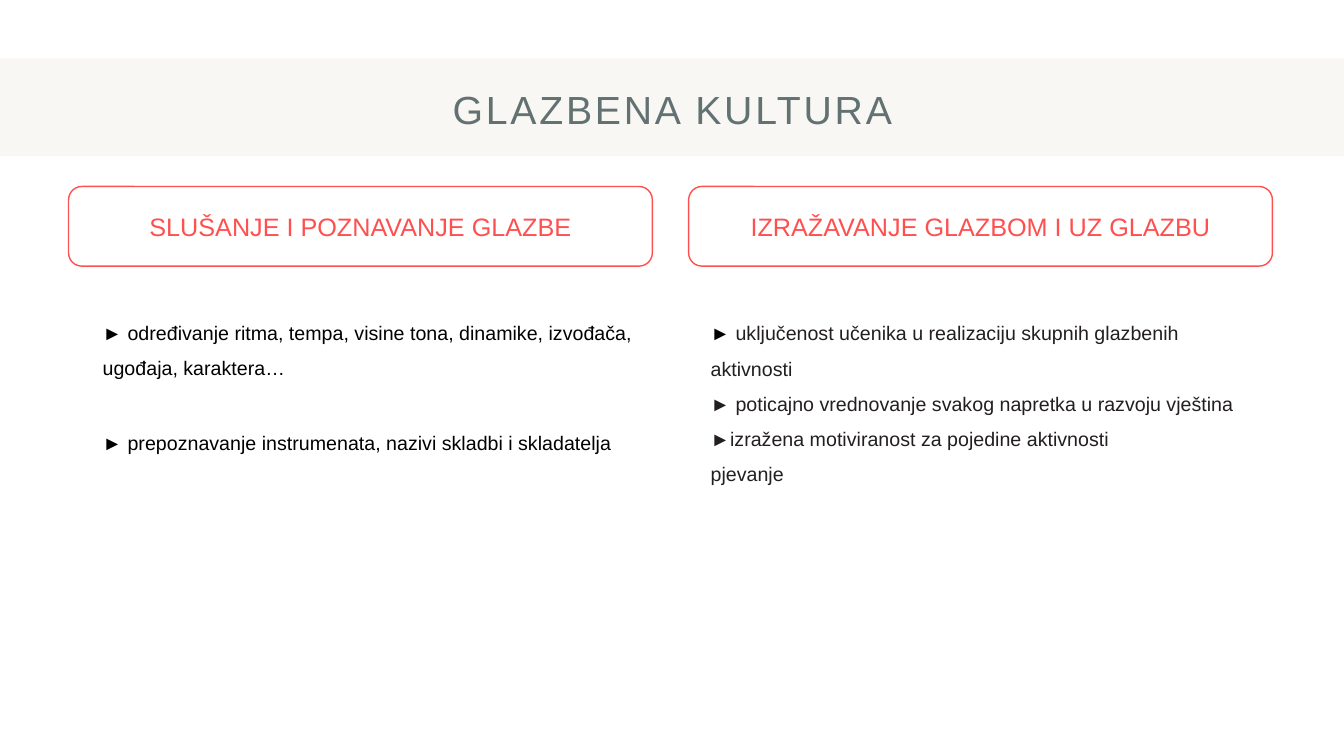
from dataclasses import dataclass

import pptx
import pptx.dml.color
import pptx.enum.shapes
import pptx.enum.text
import pptx.oxml.ns
import pptx.util
from lxml import etree

COLORS = {
    "band": "D8CAB7",
    "title": "627272",
    "accent": "FF5050",
    "black": "000000",
    "ink": "231F20",
}
FONT = "Arial"
WIDTH = pptx.util.Inches(13.33)
HEIGHT = pptx.util.Inches(7.5)

# Two columns, given in inches and turned into shares of the slide
COLUMN_LEFT = 0.68
COLUMN_STEP = 6.15
HEADING_TOP, HEADING_WIDTH, HEADING_HEIGHT = 1.85, 5.79, 0.79
NOTE_WIDTH = 5.55

Run = tuple[str, str]


@dataclass
class Note:
    top: float
    height: float
    paragraphs: list[list[Run]]


@dataclass
class Topic:
    heading: str
    indent: float
    notes: list[Note]


TOPICS = [
    Topic("SLUŠANJE I POZNAVANJE GLAZBE", 0.24, [
        Note(3.02, 0.76, [[("► određivanje ritma, tempa, visine tona, dinamike, izvođača, "
                            "ugođaja, karaktera…", "black")]]),
        Note(4.11, 0.41, [[("► prepoznavanje instrumenata, nazivi skladbi i skladatelja",
                            "black")]]),
    ]),
    Topic("IZRAŽAVANJE GLAZBOM I UZ GLAZBU", 0.12, [
        Note(3.02, 1.82, [
            [("► ", "black"),
             ("uključenost učenika u realizaciju skupnih glazbenih aktivnosti", "ink")],
            [("► poticajno vrednovanje svakog napretka u razvoju vještina", "ink")],
            [("►izražena motiviranost za pojedine aktivnosti", "ink")],
            [("pjevanje", "ink")],
        ]),
    ]),
]


def rgb(name: str) -> pptx.dml.color.RGBColor:
    return pptx.dml.color.RGBColor.from_string(COLORS[name])


def box(left: float, top: float, width: float, height: float) -> list[int]:
    return [pptx.util.Inches(length) for length in (left, top, width, height)]


def style(paragraph, size: float, color: str) -> None:
    paragraph.font.name = FONT
    paragraph.font.size = pptx.util.Pt(size)
    paragraph.font.color.rgb = rgb(color)


def add_band(slide) -> None:
    band = slide.shapes.add_shape(pptx.enum.shapes.MSO_SHAPE.RECTANGLE,
                                  0, *box(0, 0.58, 13.33, 0.97)[1:2], WIDTH,
                                  pptx.util.Inches(0.97))
    band.shadow.inherit = False
    band.line.fill.background()
    band.fill.solid()
    band.fill.fore_color.rgb = rgb("band")
    tint = band.element.spPr.find(".//" + pptx.oxml.ns.qn("a:srgbClr"))
    etree.SubElement(tint, pptx.oxml.ns.qn("a:alpha"), val="15000")


def format_title(slide, text: str) -> None:
    title = slide.shapes.title
    title.left, title.top, title.width, title.height = box(0.92, 0.68, 11.5, 0.79)
    slide.shapes.element.append(title.element)  # in front of the band
    frame = title.text_frame
    frame.text = text
    frame.auto_size = pptx.enum.text.MSO_AUTO_SIZE.NONE
    frame.vertical_anchor = pptx.enum.text.MSO_ANCHOR.MIDDLE
    paragraph = frame.paragraphs[0]
    paragraph.alignment = pptx.enum.text.PP_ALIGN.CENTER
    style(paragraph, 28, "title")
    paragraph.runs[0].font.element.set("spc", "200") if hasattr(
        paragraph.runs[0].font, "element") else paragraph.runs[0]._r.get_or_add_rPr().set(
        "spc", "200")


def add_heading(slide, text: str, left: float) -> None:
    heading = slide.shapes.add_shape(
        pptx.enum.shapes.MSO_SHAPE.ROUNDED_RECTANGLE,
        *box(left, HEADING_TOP, HEADING_WIDTH, HEADING_HEIGHT))
    heading.shadow.inherit = False
    heading.fill.background()
    heading.line.color.rgb = rgb("accent")
    heading.line.width = pptx.util.Pt(1)
    frame = heading.text_frame
    frame.text = text
    frame.vertical_anchor = pptx.enum.text.MSO_ANCHOR.MIDDLE
    frame.paragraphs[0].alignment = pptx.enum.text.PP_ALIGN.CENTER
    style(frame.paragraphs[0], 18, "accent")


def add_note(slide, note: Note, left: float) -> None:
    frame = slide.shapes.add_textbox(*box(left, note.top, NOTE_WIDTH, note.height)).text_frame
    frame.word_wrap = True
    frame.auto_size = pptx.enum.text.MSO_AUTO_SIZE.SHAPE_TO_FIT_TEXT
    for number, runs in enumerate(note.paragraphs):
        paragraph = frame.add_paragraph() if number else frame.paragraphs[0]
        paragraph.line_spacing = 1.5
        style(paragraph, 14, runs[-1][1])
        for text, color in runs:
            run = paragraph.add_run()
            run.text = text
            if color != runs[-1][1]:
                run.font.color.rgb = rgb(color)


def main() -> None:
    deck = pptx.Presentation()
    deck.slide_width, deck.slide_height = WIDTH, HEIGHT
    slide = deck.slides.add_slide(deck.slide_layouts.get_by_name("Title Only"))

    # Title on its band
    add_band(slide)
    format_title(slide, "GLAZBENA KULTURA")

    # One column per topic
    for column, topic in enumerate(TOPICS):
        left = COLUMN_LEFT + column * COLUMN_STEP
        add_heading(slide, topic.heading, left)
        for note in topic.notes:
            add_note(slide, note, left + topic.indent)

    deck.save("out.pptx")


if __name__ == "__main__":
    main()
